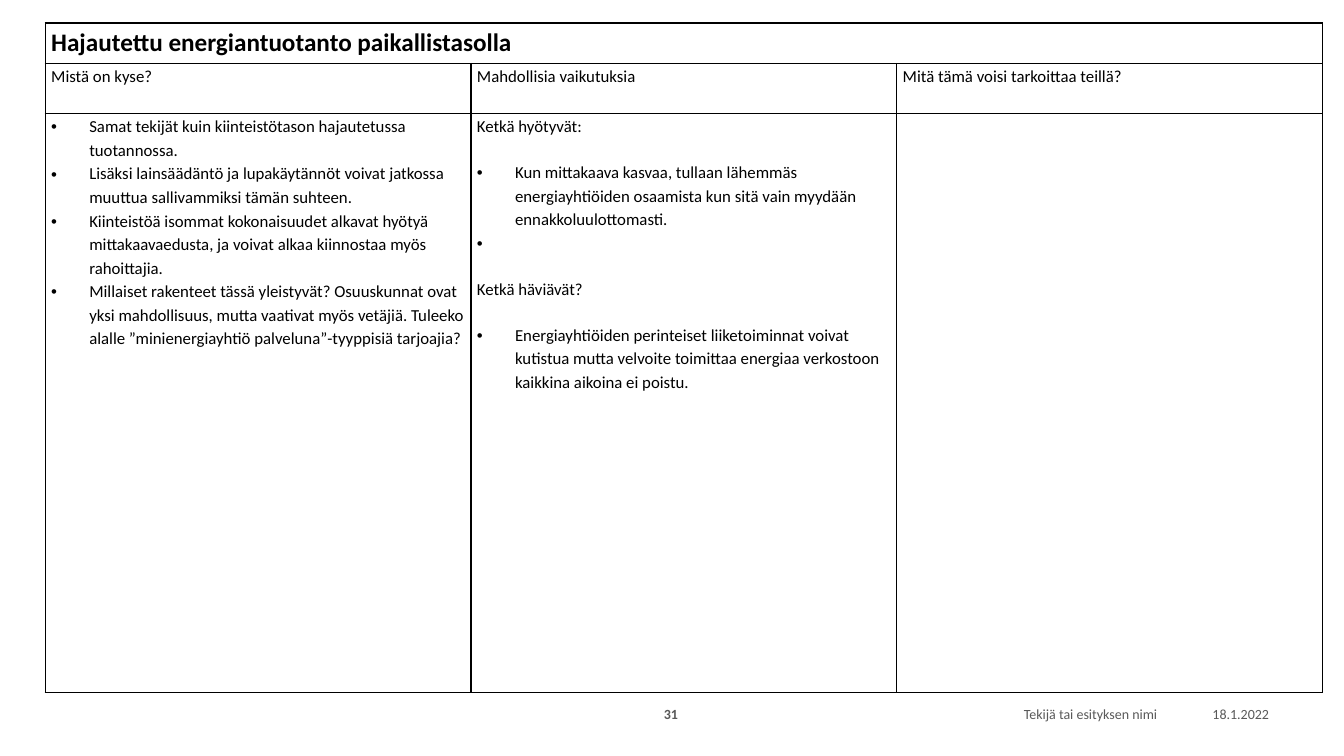
from lxml import etree
from pptx import Presentation
from pptx import util as u
from pptx.dml import color
from pptx.enum import text
from pptx.oxml import ns

BLACK, GREY = "000000", "595959"
TITLE = {"size": u.Pt(18), "bold": True}
BODY = {"size": u.Pt(12), "bold": False}
COLUMN_WIDTH = 10.73
ROW_HEIGHTS = [1.02, 1.27, 14.58]
HEADINGS = ["Mistä on kyse?", "Mahdollisia vaikutuksia", "Mitä tämä voisi tarkoittaa teillä?"]
BACKGROUND = [
    "Samat tekijät kuin kiinteistötason hajautetussa tuotannossa.",
    "Lisäksi lainsäädäntö ja lupakäytännöt voivat jatkossa muuttua sallivammiksi tämän suhteen.",
    "Kiinteistöä isommat kokonaisuudet alkavat hyötyä mittakaavaedusta, ja voivat alkaa kiinnostaa myös rahoittajia.",
    "Millaiset rakenteet tässä yleistyvät? Osuuskunnat ovat yksi mahdollisuus, mutta vaativat myös vetäjiä. "
    "Tuleeko alalle ”minienergiayhtiö palveluna”-tyyppisiä tarjoajia?",
]
IMPACTS = [
    ("Ketkä hyötyvät:", False, 0, 10),
    ("Kun mittakaava kasvaa, tullaan lähemmäs energiayhtiöiden osaamista kun sitä vain myydään "
     "ennakkoluulottomasti.", True, 6, 0),
    (" ", True, 0, 10),
    ("Ketkä häviävät?", False, 6, 10),
    ("Energiayhtiöiden perinteiset liiketoiminnat voivat kutistua mutta velvoite toimittaa energiaa "
     "verkostoon kaikkina aikoina ei poistu.", True, 6, 0),
]
FOOTERS = [
    ("18.1.2022", 29.41, 2.82, text.PP_ALIGN.RIGHT, False),
    ("Tekijä tai esityksen nimi", 18.82, 10.59, text.PP_ALIGN.RIGHT, False),
    ("31", 16.15, 1.52, text.PP_ALIGN.CENTER, True),
]


def rgb(value):
    return color.RGBColor.from_string(value)


def apply(target, values):
    for name, value in values.items():
        setattr(target, name, value)


def add_text(paragraph, wording, font, colour=BLACK):
    run = paragraph.add_run()
    run.text = wording
    apply(run.font, {"name": "Calibri", **font})
    run.font.color.rgb = rgb(colour)


def add_bullet(paragraph):
    properties = paragraph._p.get_or_add_pPr()
    properties.set("marL", str(u.Cm(0.96)))
    properties.set("indent", str(-u.Cm(0.96)))
    etree.SubElement(properties, ns.qn("a:buFont")).set("typeface", "Arial")
    etree.SubElement(properties, ns.qn("a:buChar")).set("char", "•")


def add_borders(cell):
    properties = cell._tc.get_or_add_tcPr()
    for position, side in enumerate("LRTB"):
        line = etree.Element(ns.qn(f"a:ln{side}"), w=str(u.Pt(1)))
        fill = etree.SubElement(line, ns.qn("a:solidFill"))
        etree.SubElement(fill, ns.qn("a:srgbClr")).set("val", BLACK)
        properties.insert(position, line)


def format_cell(cell):
    apply(cell, {"margin_left": u.Cm(0.15), "margin_right": u.Cm(0.15),
                 "margin_top": 0, "margin_bottom": 0})
    cell.fill.background()
    add_borders(cell)


def fill_cell(cell, paragraphs, font=BODY):
    frame = cell.text_frame
    for index, (wording, bulleted, before, after) in enumerate(paragraphs):
        paragraph = frame.add_paragraph() if index else frame.paragraphs[0]
        if bulleted:
            add_bullet(paragraph)
        apply(paragraph, {"line_spacing": 1.15, "space_before": u.Pt(before), "space_after": u.Pt(after)})
        add_text(paragraph, wording, font)


def add_energy_table(slide):
    frame = slide.shapes.add_table(len(ROW_HEIGHTS), len(HEADINGS), u.Cm(1.14), u.Cm(0.58),
                                   u.Cm(COLUMN_WIDTH * len(HEADINGS)), u.Cm(sum(ROW_HEIGHTS)))
    table = frame.table
    apply(table, {"first_row": False, "horz_banding": False})
    for column in table.columns:
        column.width = u.Cm(COLUMN_WIDTH)
    for row, height in zip(table.rows, ROW_HEIGHTS):
        row.height = u.Cm(height)
        for cell in row.cells:
            format_cell(cell)
    table.cell(0, 0).merge(table.cell(0, len(HEADINGS) - 1))
    fill_cell(table.cell(0, 0), [("Hajautettu energiantuotanto paikallistasolla", False, 0, 0)], TITLE)
    for index, heading in enumerate(HEADINGS):
        fill_cell(table.cell(1, index), [(heading, False, 0, 0)])
    fill_cell(table.cell(2, 0), [(wording, True, 0, 0) for wording in BACKGROUND])
    fill_cell(table.cell(2, 1), IMPACTS)


def add_footer(slide, wording, left, width, alignment, bold):
    box = slide.shapes.add_textbox(u.Cm(left), u.Cm(17.65), u.Cm(width), u.Cm(0.69))
    frame = box.text_frame
    apply(frame, {"word_wrap": True, "vertical_anchor": text.MSO_ANCHOR.MIDDLE})
    paragraph = frame.paragraphs[0]
    paragraph.alignment = alignment
    add_text(paragraph, wording, {"size": u.Pt(10), "bold": bold}, GREY)


def main():
    presentation = Presentation()
    apply(presentation, {"slide_width": u.Cm(33.87), "slide_height": u.Cm(19.05)})
    slide = presentation.slides.add_slide(presentation.slide_layouts[6])
    for footer in FOOTERS:
        add_footer(slide, *footer)
    add_energy_table(slide)
    presentation.save("out.pptx")


if __name__ == "__main__":
    main()
